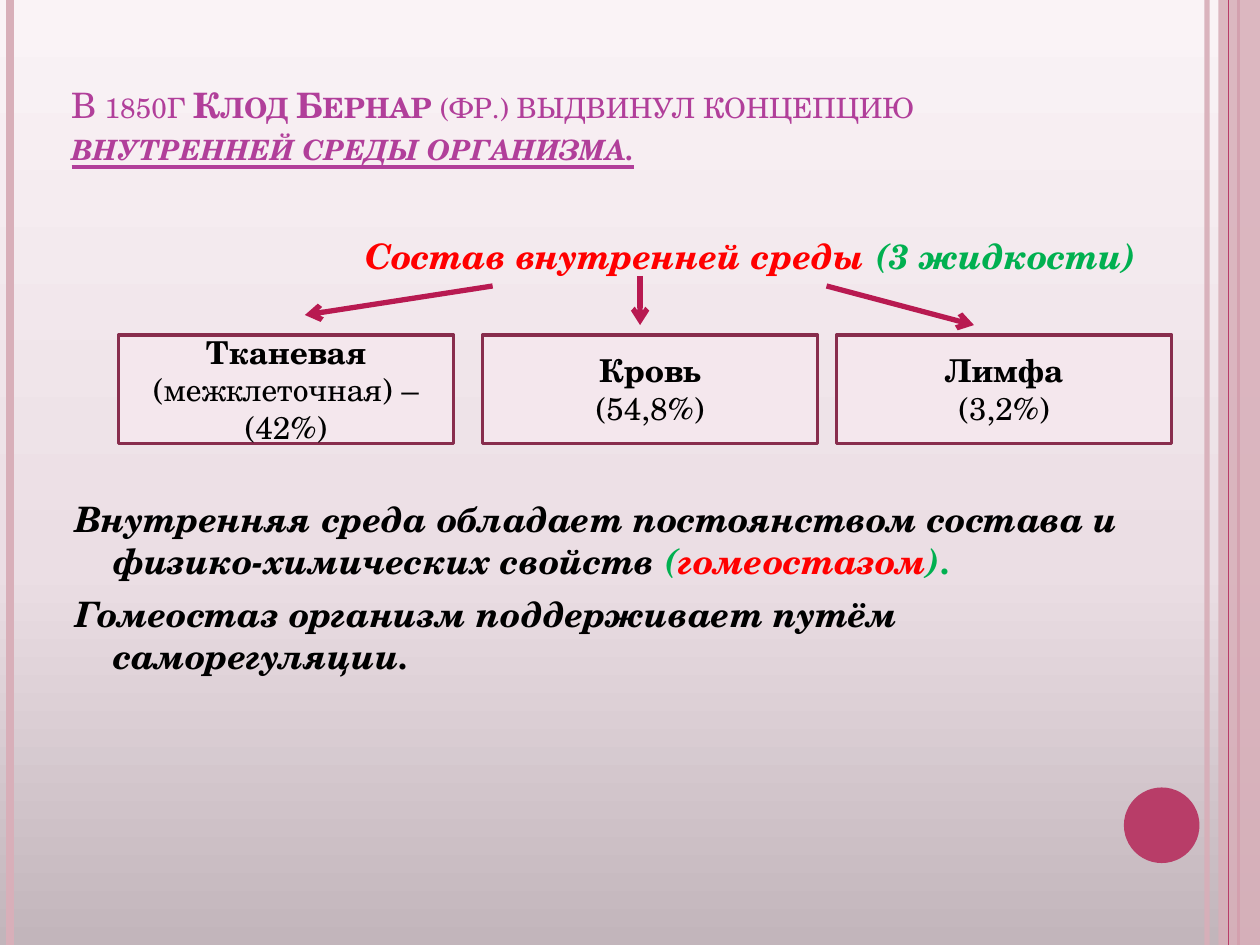
from dataclasses import dataclass
from pptx import Presentation
from pptx.dml.color import RGBColor as RGB
from pptx.enum.shapes import MSO_CONNECTOR as Conn, MSO_SHAPE as Kind
from pptx.enum.text import MSO_ANCHOR as Anchor, PP_ALIGN as Align
from pptx.oxml.ns import qn
from pptx.oxml.xmlchemy import OxmlElement as Node
from pptx.util import Inches, Pt

WIDE, HIGH = 10, 7.5


@dataclass(frozen=True)
class Theme:
    font: str = "TeX Gyre Schola"
    big: int = 20
    small: int = 18
    title: str = "B13F9A"
    red: str = "FF0000"
    green: str = "00B050"
    black: str = "000000"
    pale: str = "D8AFB9"
    rose: str = "B83D68"
    arrow: str = "B81A51"
    card: str = "F4E7ED"
    edge: str = "882D4D"
    back: tuple = ((0, "C2B5BB"), (40, "EBDEE4"), (100, "FAF3F6"))


T = Theme()


def add(parent, tag, **attrs):
    node = Node(tag)
    for key, val in attrs.items():
        node.set(key, str(val))
    parent.append(node)
    return node


def fade(fill, share):
    """Give a solid fill an opacity in percent."""
    color = fill._xPr.find(".//" + qn("a:srgbClr"))
    add(color, "a:alpha", val=share * 1000)


def paint(slide):
    fill = slide.background.fill
    fill.gradient()
    fill.gradient_angle = 90
    stops = slide.element.find(".//" + qn("a:gsLst"))
    for old in list(stops):
        stops.remove(old)
    for pos, color in T.back:
        stop = add(stops, "a:gs", pos=pos * 1000)
        add(stop, "a:srgbClr", val=color)


def line(slide, start, end, color, width, alpha=None, head=False):
    ends = [Inches(v) for v in (*start, *end)]
    item = slide.shapes.add_connector(Conn.STRAIGHT, *ends)
    item.line.color.rgb = RGB.from_string(color)
    item.line.width = Pt(width)
    if alpha:
        fade(item.line.fill, alpha)
    if head:
        add(item.line._get_or_add_ln(), "a:tailEnd", type="arrow")
    add(item._element.spPr, "a:effectLst")


def shape(slide, kind, area, fill, edge=None, alpha=None):
    item = slide.shapes.add_shape(kind, *map(Inches, area))
    item.shadow.inherit = False
    item.fill.solid()
    item.fill.fore_color.rgb = RGB.from_string(fill)
    if alpha:
        fade(item.fill, alpha)
    if edge:
        item.line.color.rgb = RGB.from_string(edge)
        item.line.width = Pt(2)
    else:
        item.line.fill.background()
    return item


def write(frame, paras, size, align=Align.LEFT, hang=0, caps=False):
    """Fill a frame; each run is (text, colour, font formats)."""
    frame.word_wrap = True
    for i, runs in enumerate(paras):
        para = frame.paragraphs[0] if i == 0 else frame.add_paragraph()
        para.alignment = align
        if i and hang:
            para.space_before = Pt(6)
        if hang:
            props = para._p.get_or_add_pPr()
            props.set("marL", str(Inches(hang)))
            props.set("indent", str(-Inches(hang)))
        for text, color, marks in runs:
            run = para.add_run()
            run.text = text
            form = {"name": T.font, "size": Pt(size), **marks}
            for key, val in form.items():
                setattr(run.font, key, val)
            run.font.color.rgb = RGB.from_string(color)
            if caps:
                run._r.get_or_add_rPr().set("cap", "small")


def label(slide, area, paras, **opts):
    frame = slide.shapes.add_textbox(*map(Inches, area)).text_frame
    write(frame, paras, T.big, **opts)
    return frame


def frame_art(slide):
    rules = [(9.58, T.pale, 3, 93), (0.08, T.pale, 4.5, None),
             (9.83, T.rose, 1.5, None)]
    for x, color, width, alpha in rules:
        line(slide, (x, 0), (x, HIGH), color, width, alpha)
    shape(slide, Kind.RECTANGLE, (9.67, 0, 0.33, HIGH), T.pale, alpha=87)
    line(slide, (9.75, 0), (9.75, HIGH), T.rose, 0.75)
    shape(slide, Kind.OVAL, (8.92, 6.25, 0.6, 0.6), T.rose)


def cards(slide):
    bold = {"bold": True}
    texts = [
        [[("Тканевая ", T.black, bold),
          ("(межклеточная) –(42%)", T.black, {})]],
        [[("Кровь", T.black, bold)], [("(54,8%)", T.black, {})]],
        [[("Лимфа", T.black, bold)], [("(3,2%)", T.black, {})]],
    ]
    for x, paras in zip((0.94, 3.83, 6.64), texts):
        box = shape(slide, Kind.RECTANGLE, (x, 2.66, 2.66, 0.86),
                    T.card, T.edge)
        box.text_frame.vertical_anchor = Anchor.MIDDLE
        write(box.text_frame, paras, T.small, Align.CENTER)


def main():
    deck = Presentation()
    deck.slide_width, deck.slide_height = Inches(WIDE), Inches(HIGH)
    slide = deck.slides.add_slide(deck.slide_layouts[6])
    bold = {"bold": True}
    slant = {"bold": True, "italic": True}

    # Background and side stripes
    paint(slide)
    frame_art(slide)

    # Title
    title = label(slide, (0.47, 0.78, 8.17, 0.94), [[
        ("В 1850г ", T.title, {}),
        ("Клод Бернар ", T.title, bold),
        ("(фр.) выдвинул концепцию ", T.title, {}),
        ("внутренней среды организма.", T.title,
         {**slant, "underline": True})]], caps=True)
    title.vertical_anchor = Anchor.BOTTOM
    title.margin_bottom = Inches(0.39)

    # Heading of the scheme
    label(slide, (2.8, 1.81, 6.73, 0.43), [[
        ("Состав внутренней среды ", T.red, slant),
        ("(3 жидкости)", T.green, slant)]])

    # Statements
    label(slide, (0.5, 3.9, 9.03, 3.18), [
        [("Внутренняя среда обладает постоянством состава и "
          "физико-химических свойств ", T.black, slant),
         ("(", T.green, slant),
         ("гомеостазом", T.red, slant),
         (").", T.green, slant)],
        [("Гомеостаз организм поддерживает путём саморегуляции.",
          T.black, slant)]], hang=0.3)

    # Three fluids and their arrows
    cards(slide)
    for start, end in (((3.91, 2.27), (2.42, 2.5)),
                       ((5.08, 2.19), (5.08, 2.58)),
                       ((6.56, 2.27), (7.73, 2.58))):
        line(slide, start, end, T.arrow, 3, head=True)

    deck.save("out.pptx")


if __name__ == "__main__":
    main()
